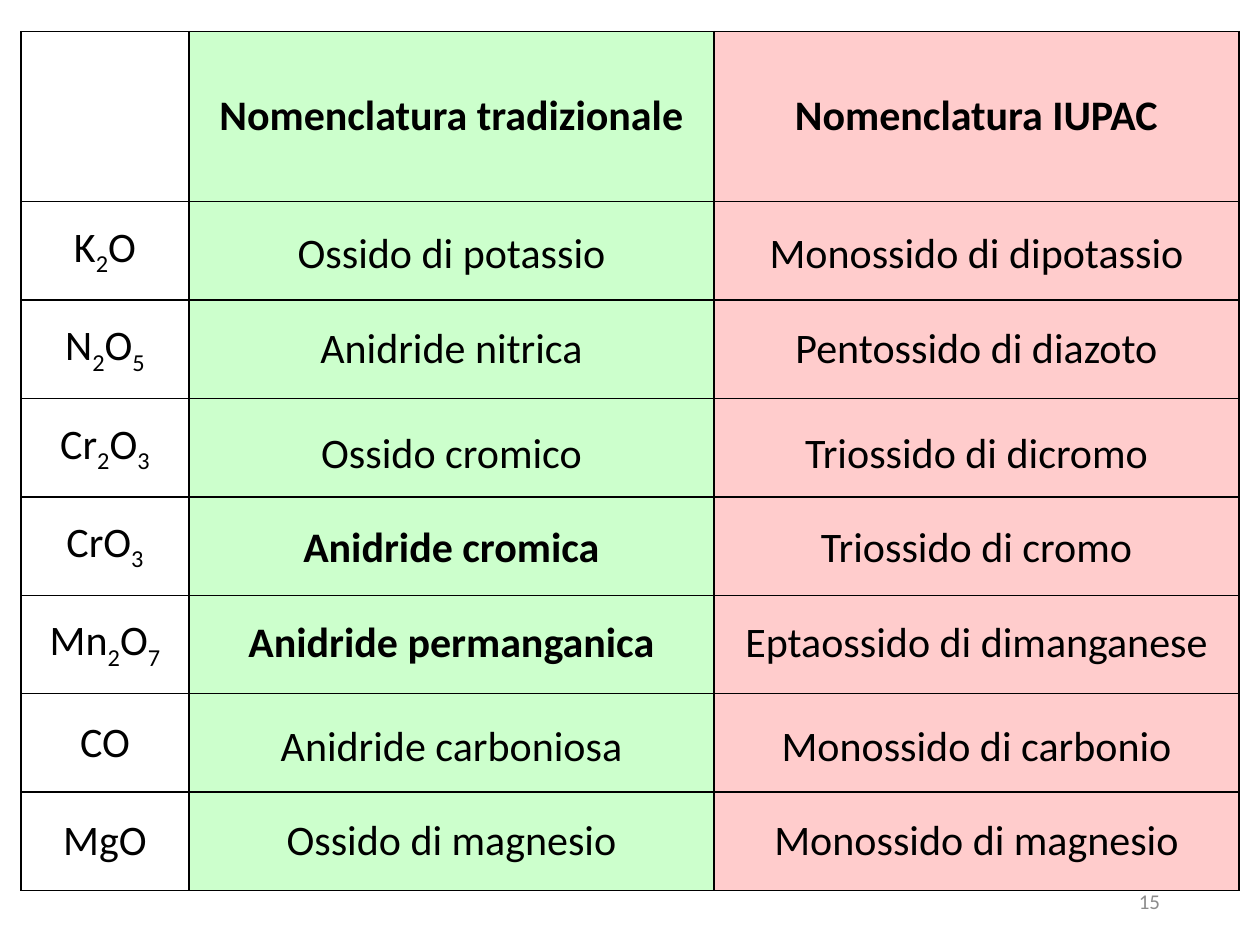
import itertools

import pptx
import pptx.util
from lxml import etree
from pptx.dml.color import RGBColor
from pptx.enum.text import MSO_ANCHOR, PP_ALIGN
from pptx.oxml.ns import qn
from pptx.util import Pt

BLACK = RGBColor(0x00, 0x00, 0x00)
WHITE = RGBColor(0xFF, 0xFF, 0xFF)
GREEN = RGBColor(0xCC, 0xFF, 0xCC)
PINK = RGBColor(0xFF, 0xCC, 0xCC)
GREY = RGBColor(0x8C, 0x8C, 0x8C)

HEADERS = ["", "Nomenclatura tradizionale", "Nomenclatura IUPAC"]
FILLS = [WHITE, GREEN, PINK]
COL_WIDTHS = [96, 300, 300]
HEADER_HEIGHT = 97.2
ROW_HEIGHT = 56.25

# formula, traditional name, traditional name in bold, IUPAC name, top of the names
COMPOUNDS = [
    ("K2O", "Ossido di potassio", False, "Monossido di dipotassio", 126),
    ("N2O5", "Anidride nitrica", False, "Pentossido di diazoto", 180),
    ("Cr2O3", "Ossido cromico", False, "Triossido di dicromo", 240),
    ("CrO3", "Anidride cromica", True, "Triossido di cromo", 294),
    ("Mn2O7", "Anidride permanganica", True, "Eptaossido di dimanganese", 348),
    ("CO", "Anidride carboniosa", False, "Monossido di carbonio", 407.5),
    ("MgO", "Ossido di magnesio", False, "Monossido di magnesio", 461.5),
]


def style(p, size=24, bold=False, color=BLACK, align=PP_ALIGN.CENTER):
    p.alignment = align
    p.font.name = "Calibri"
    p.font.size = Pt(size)
    p.font.bold = bold
    p.font.color.rgb = color


def add_formula(p, formula):
    """Write a chemical formula with its digits as subscripts."""
    for is_digit, chars in itertools.groupby(formula, str.isdigit):
        r = p.add_run()
        r.text = "".join(chars)
        if is_digit:
            r._r.get_or_add_rPr().set("baseline", "-25000")


def set_borders(cell):
    tcPr = cell._tc.get_or_add_tcPr()
    for i, side in enumerate(("a:lnL", "a:lnR", "a:lnT", "a:lnB")):
        ln = etree.Element(qn(side), w=str(Pt(1)))
        fill = etree.SubElement(ln, qn("a:solidFill"))
        etree.SubElement(fill, qn("a:srgbClr"), val=str(BLACK))
        tcPr.insert(i, ln)


def add_text(slide, text, left, top, width, height, anchor=MSO_ANCHOR.TOP, **font):
    tf = slide.shapes.add_textbox(Pt(left), Pt(top), Pt(width), Pt(height)).text_frame
    tf.word_wrap = True
    tf.vertical_anchor = anchor
    p = tf.paragraphs[0]
    p.text = text
    style(p, **font)


def add_grid(slide, left, top):
    heights = [HEADER_HEIGHT] + [ROW_HEIGHT] * len(COMPOUNDS)
    table = slide.shapes.add_table(
        len(heights), len(COL_WIDTHS), Pt(left), Pt(top),
        Pt(sum(COL_WIDTHS)), Pt(sum(heights))).table
    for column, width in zip(table.columns, COL_WIDTHS):
        column.width = Pt(width)
    for row, height in zip(table.rows, heights):
        row.height = Pt(height)
        for cell, fill in zip(row.cells, FILLS):
            cell.fill.solid()
            cell.fill.fore_color.rgb = fill
            cell.vertical_anchor = MSO_ANCHOR.MIDDLE
            set_borders(cell)
    for col, header in enumerate(HEADERS):
        p = table.cell(0, col).text_frame.paragraphs[0]
        p.text = header
        style(p, bold=True)
    for row, compound in enumerate(COMPOUNDS, start=1):
        p = table.cell(row, 0).text_frame.paragraphs[0]
        add_formula(p, compound[0])
        style(p)


def add_names(slide, left):
    """Lay the names of the compounds over the two coloured columns."""
    traditional_left = left + COL_WIDTHS[0]
    iupac_left = traditional_left + COL_WIDTHS[1]
    for _, traditional, bold, iupac, top in COMPOUNDS:
        add_text(slide, traditional, traditional_left, top, COL_WIDTHS[1], 36, bold=bold)
        add_text(slide, iupac, iupac_left, top, COL_WIDTHS[2], 36)


def main():
    prs = pptx.Presentation()
    prs.slide_width, prs.slide_height = Pt(720), Pt(540)
    slide = prs.slides.add_slide(prs.slide_layouts[6])
    add_text(slide, "15", 508, 500.5, 162, 28.75, MSO_ANCHOR.MIDDLE,
             size=12, color=GREY, align=PP_ALIGN.RIGHT)
    add_grid(slide, 12, 18)
    add_names(slide, 12)
    prs.save("out.pptx")


if __name__ == "__main__":
    main()
